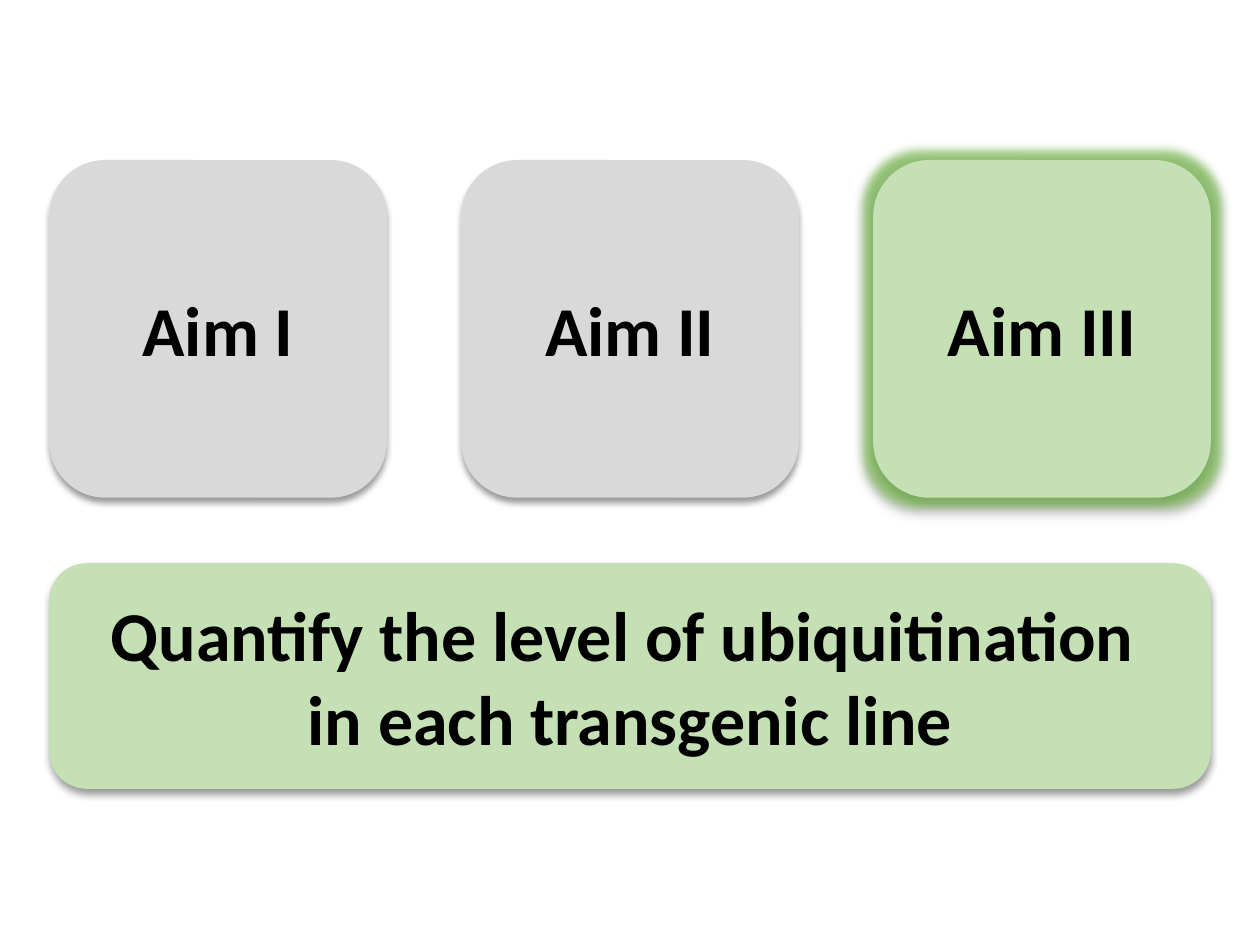
from dataclasses import dataclass

from lxml.etree import SubElement
from pptx import Presentation
from pptx.dml.color import RGBColor
from pptx.enum.shapes import MSO_SHAPE as Shape
from pptx.enum.text import MSO_ANCHOR as Anchor, PP_ALIGN as Align
from pptx.oxml.ns import qn
from pptx.util import Inches, Pt

AIMS = ["Aim I", "Aim II", "Aim III"]
CURRENT_AIM = "Aim III"
# The vertical tab is a line break inside the paragraph.
GOAL = "Quantify the level of ubiquitination \vin each transgenic line"


@dataclass(frozen=True)
class Theme:
    font: str = "Calibri"
    size: int = 40
    text: str = "000000"
    active: str = "C5E0B4"
    inactive: str = "D9D9D9"
    shadow: str = "000000"
    glow: str = "6CBB3C"


THEME = Theme()
SLIDE_WIDTH, SLIDE_HEIGHT = 10, 7.5
MARGIN = 0.39
AIM_TOP, AIM_SIDE = 1.27, 2.68
GOAL_TOP, GOAL_HEIGHT = 4.47, 1.79
CONTENT_WIDTH = SLIDE_WIDTH - 2 * MARGIN
AIM_STEP = (CONTENT_WIDTH - AIM_SIDE) / (len(AIMS) - 1)


def add_effect(box, tag, color, opacity, **attributes):
    """Append a glow or shadow, with opacity in percent, to the box's effects."""
    effects = box._element.spPr.find(qn("a:effectLst"))
    values = {name: str(value) for name, value in attributes.items()}
    effect = SubElement(effects, qn(tag), values)
    tint = SubElement(effect, qn("a:srgbClr"), val=color)
    SubElement(tint, qn("a:alpha"), val=str(opacity * 1000))


def add_box(page, text, left, top, width, height, fill, glowing=False):
    box = page.shapes.add_shape(
        Shape.ROUNDED_RECTANGLE, *map(Inches, (left, top, width, height)))
    box.fill.solid()
    box.fill.fore_color.rgb = RGBColor.from_string(fill)
    box.line.fill.background()
    box.shadow.inherit = False
    if glowing:
        add_effect(box, "a:glow", THEME.glow, 60, rad=Pt(11))
    add_effect(box, "a:outerShdw", THEME.shadow, 40, blurRad=Pt(4),
               dist=Pt(3), dir=90 * 60000, rotWithShape=0)

    frame = box.text_frame
    frame.word_wrap = True
    frame.vertical_anchor = Anchor.MIDDLE
    para = frame.paragraphs[0]
    para.text = text
    para.alignment = Align.CENTER
    para.font.name = THEME.font
    para.font.size = Pt(THEME.size)
    para.font.bold = True
    para.font.color.rgb = RGBColor.from_string(THEME.text)


def main():
    deck = Presentation()
    deck.slide_width, deck.slide_height = Inches(SLIDE_WIDTH), Inches(SLIDE_HEIGHT)
    page = deck.slides.add_slide(deck.slide_layouts[6])

    for index, aim in enumerate(AIMS):
        current = aim == CURRENT_AIM
        add_box(page, aim, MARGIN + index * AIM_STEP, AIM_TOP, AIM_SIDE, AIM_SIDE,
                THEME.active if current else THEME.inactive, glowing=current)
    add_box(page, GOAL, MARGIN, GOAL_TOP, CONTENT_WIDTH, GOAL_HEIGHT, THEME.active)

    deck.save("out.pptx")


if __name__ == "__main__":
    main()
